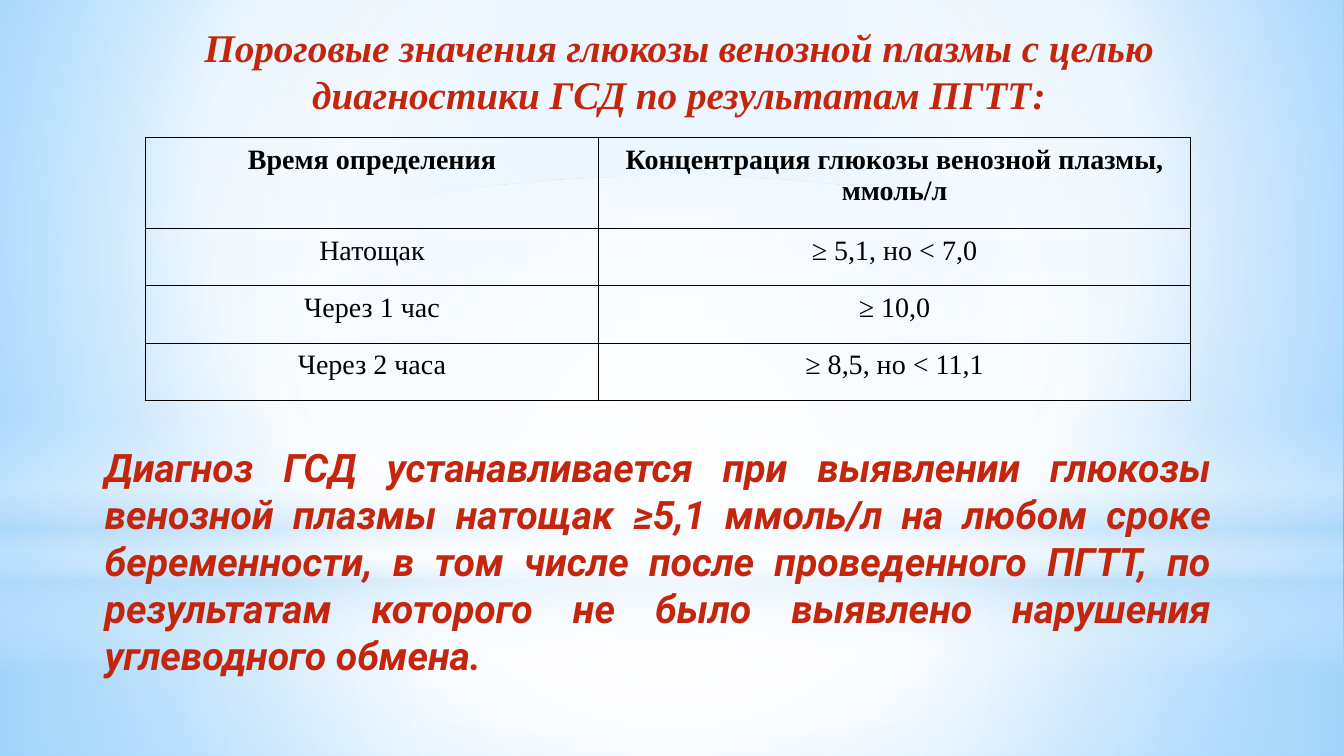
from dataclasses import dataclass

from lxml import etree
from pptx import Presentation
from pptx.dml.color import RGBColor
from pptx.enum.shapes import MSO_SHAPE
from pptx.enum.text import MSO_ANCHOR, PP_ALIGN
from pptx.oxml.ns import qn
from pptx.util import Pt

RECTANGLE, OVAL = MSO_SHAPE.RECTANGLE, MSO_SHAPE.OVAL
TOP = MSO_ANCHOR.TOP
CENTER, JUSTIFY = PP_ALIGN.CENTER, PP_ALIGN.JUSTIFY


@dataclass(frozen=True)
class Theme:
    white: str = "FFFFFF"
    haze: str = "B4DCFA"
    sky_inner: str = "9ED5FF"
    sky_outer: str = "5BB9FF"
    accent: str = "C3260C"
    ink: str = "000000"
    serif: str = "Times New Roman"
    sans: str = "Roboto"
    heading_size: int = 28
    table_size: int = 20
    border: float = 0.5


theme = Theme()


def set_gradient(properties, stops, focus=None):
    """Swap a solid fill for a gradient: circular around focus, else vertical."""
    gradient = etree.Element(qn("a:gradFill"), rotWithShape="1")
    stop_list = etree.SubElement(gradient, qn("a:gsLst"))
    for position, color, opacity in stops:
        stop = etree.SubElement(stop_list, qn("a:gs"), pos=str(position * 1000))
        tint = etree.SubElement(stop, qn("a:srgbClr"), val=color)
        if opacity < 100:
            etree.SubElement(tint, qn("a:alpha"), val=str(opacity * 1000))
    if focus:
        circle = etree.SubElement(gradient, qn("a:path"), path="circle")
        sides = {side: str(share * 1000) for side, share in zip("ltrb", focus)}
        etree.SubElement(circle, qn("a:fillToRect"), **sides)
    else:
        etree.SubElement(gradient, qn("a:lin"), ang="5400000", scaled="0")
    properties.replace(properties.find(qn("a:solidFill")), gradient)


def write(frame, text, font, size, color, align, bold=True, italic=False):
    frame.word_wrap = True
    para = frame.paragraphs[0]
    para.text = text
    para.alignment = align
    para.font.name = font
    para.font.size = Pt(size)
    para.font.bold = bold
    para.font.italic = italic
    para.font.color.rgb = RGBColor.from_string(color)


deck = Presentation()
deck.slide_width, deck.slide_height = Pt(960), Pt(540)
page = deck.slides.add_slide(deck.slide_layouts[6])

# Sky background
page.background.fill.solid()
set_gradient(
    page.element.find(".//" + qn("p:bgPr")),
    [(0, theme.sky_inner, 100), (60, theme.white, 100), (100, theme.sky_outer, 100)],
    (20, 10, 20, 60),
)

# Translucent haze layers: shape, top, height, stops, focus
middle = (50, 50, 50, 50)
layers = [
    (RECTANGLE, 402, 138,
     [(0, theme.white, 91), (37, theme.white, 76), (100, theme.haze, 79)], middle),
    (RECTANGLE, 0, 402,
     [(0, theme.white, 89), (48, theme.white, 62), (100, theme.haze, 79)], middle),
    (RECTANGLE, 296.6, 180,
     [(0, theme.white, 0), (29, theme.white, 30), (45, theme.haze, 40),
      (55, theme.white, 26), (65, theme.haze, 60), (100, theme.white, 0)], None),
    (OVAL, 126, 402, [(0, theme.white, 100), (56, theme.white, 0)], middle),
]
for kind, top, height, stops, focus in layers:
    layer = page.shapes.add_shape(kind, 0, Pt(top), deck.slide_width, Pt(height))
    layer.shadow.inherit = False
    layer.line.fill.background()
    layer.fill.solid()
    set_gradient(layer.element.spPr, stops, focus)

# Heading and conclusion
statements = [
    ((67, 13, 836, 80), theme.serif, CENTER,
     "Пороговые значения глюкозы венозной плазмы с целью диагностики ГСД "
     "по результатам ПГТТ:"),
    ((67.7, 313.2, 804.2, 121), theme.sans, JUSTIFY,
     "Диагноз ГСД устанавливается при выявлении глюкозы венозной плазмы натощак "
     "≥5,1 ммоль/л на любом сроке беременности, в том числе после проведенного "
     "ПГТТ, по результатам которого не было выявлено нарушения углеводного обмена."),
]
for place, font, align, text in statements:
    box = page.shapes.add_textbox(*map(Pt, place))
    box.text_frame.vertical_anchor = TOP
    write(box.text_frame, text, font, theme.heading_size, theme.accent, align,
          italic=True)

# Threshold table
rows = [
    ("Время определения", "Концентрация глюкозы венозной плазмы, ммоль/л"),
    ("Натощак", "≥ 5,1, но < 7,0"),
    ("Через 1 час", "≥ 10,0"),
    ("Через 2 часа", "≥ 8,5, но < 11,1"),
]
widths = (323.5, 423)
heights = (65, 41, 41, 41)
table = page.shapes.add_table(
    len(rows), len(widths), Pt(104), Pt(98), Pt(sum(widths)), Pt(sum(heights))
).table
table.first_row = table.horz_banding = False
for column, width in zip(table.columns, widths):
    column.width = Pt(width)
for row, height, texts in zip(table.rows, heights, rows):
    row.height = Pt(height)
    for cell, text in zip(row.cells, texts):
        cell.margin_left = cell.margin_right = Pt(5)
        cell.margin_top = cell.margin_bottom = Pt(5)
        write(cell.text_frame, text, theme.serif, theme.table_size, theme.ink,
              CENTER, bold=texts is rows[0])
        # Borders come before the fill in the cell properties
        properties = cell._tc.get_or_add_tcPr()
        for side in ("lnL", "lnR", "lnT", "lnB"):
            edge = etree.SubElement(properties, qn("a:" + side),
                                    w=str(Pt(theme.border)))
            paint = etree.SubElement(edge, qn("a:solidFill"))
            etree.SubElement(paint, qn("a:srgbClr"), val=theme.ink)
        cell.fill.background()

deck.save("out.pptx")
